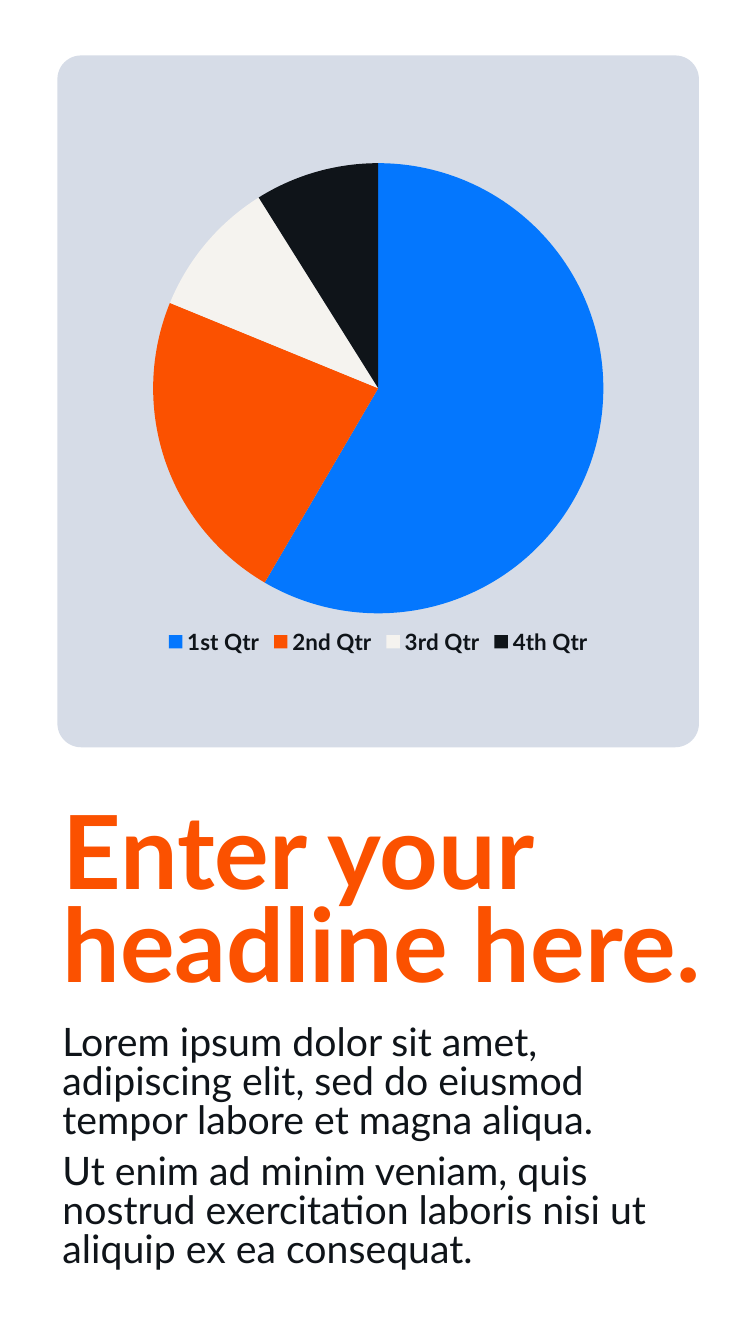
from pptx import Presentation
from pptx.chart.data import CategoryChartData
from pptx.dml.color import RGBColor
from pptx.enum.chart import XL_CHART_TYPE, XL_LEGEND_POSITION
from pptx.enum.shapes import MSO_SHAPE
from pptx.util import Pt

PIE = XL_CHART_TYPE.PIE
BOTTOM = XL_LEGEND_POSITION.BOTTOM
ROUNDED = MSO_SHAPE.ROUNDED_RECTANGLE

# Content
HEADLINE = "Enter your headline here."
BODY = [
    "Lorem ipsum dolor sit amet, adipiscing elit, sed do eiusmod tempor labore et magna aliqua.",
    "Ut enim ad minim veniam, quis nostrud exercitation laboris nisi ut aliquip ex ea consequat.",
]
QUARTERS = [("1st Qtr", 59), ("2nd Qtr", 23), ("3rd Qtr", 10), ("4th Qtr", 9)]

THEME = {
    "font": "Lato",
    "chart_font": "Roboto",
    "panel": RGBColor.from_string("D6DCE7"),
    "ink": RGBColor.from_string("0F1419"),
    "accent": RGBColor.from_string("FB5100"),
    "slices": [RGBColor.from_string(c) for c in ("0477FE", "FB5100", "F5F3EF", "0F1419")],
    # size, line spacing, space after
    "headline": (146, 132, 32),
    "body": (56, 56, 16),
    "legend_size": 32,
    "chart_size": 10,
}

# Layout: left, top, width, height
SLIDE = (1080, 1920.24)
PANEL_BOX = (82, 79.2, 916.5, 988.5)
CHART_BOX = (162.7, 223.2, 755.3, 719.3)
TEXT_BOX = (89.3, 1168.6, 916.5, 698.4)


def points(box):
    return [Pt(length) for length in box]


def style_font(font, name, size, color, bold=False):
    font.name, font.size, font.bold = name, Pt(size), bold
    font.color.rgb = color


def add_panel(slide):
    panel = slide.shapes.add_shape(ROUNDED, *points(PANEL_BOX))
    panel.adjustments[0] = 0.037
    panel.shadow.inherit = False
    panel.fill.solid()
    panel.fill.fore_color.rgb = THEME["panel"]
    panel.line.fill.background()


def add_pie(slide):
    data = CategoryChartData()
    data.categories = [quarter for quarter, _ in QUARTERS]
    data.add_series("Series 1", [value for _, value in QUARTERS])
    chart = slide.shapes.add_chart(PIE, *points(CHART_BOX), data).chart
    chart.has_title = False
    style_font(chart.font, THEME["chart_font"], THEME["chart_size"], THEME["ink"])

    chart.has_legend = True
    chart.legend.position = BOTTOM
    chart.legend.include_in_layout = False
    style_font(chart.legend.font, THEME["font"], THEME["legend_size"], THEME["ink"], True)

    plot = chart.plots[0]
    plot.vary_by_categories = True
    for index, color in enumerate(THEME["slices"]):
        pie_slice = plot.series[0].points[index].format
        pie_slice.fill.solid()
        pie_slice.fill.fore_color.rgb = color
        pie_slice.line.fill.background()


def add_copy(slide):
    frame = slide.shapes.add_textbox(*points(TEXT_BOX)).text_frame
    frame.word_wrap = True
    frame.margin_left = frame.margin_top = frame.margin_right = frame.margin_bottom = 0
    lines = [(HEADLINE, "headline", THEME["accent"], True)]
    lines += [(text, "body", THEME["ink"], False) for text in BODY]
    for index, (text, style, color, bold) in enumerate(lines):
        paragraph = frame.add_paragraph() if index else frame.paragraphs[0]
        size, spacing, after = THEME[style]
        paragraph.line_spacing = Pt(spacing)
        paragraph.space_after = Pt(after)
        run = paragraph.add_run()
        run.text = text
        style_font(run.font, THEME["font"], size, color, bold)


def main():
    deck = Presentation()
    deck.slide_width, deck.slide_height = points(SLIDE)
    slide = deck.slides.add_slide(deck.slide_layouts[6])
    add_panel(slide)
    add_pie(slide)
    add_copy(slide)
    deck.save("out.pptx")


if __name__ == "__main__":
    main()
